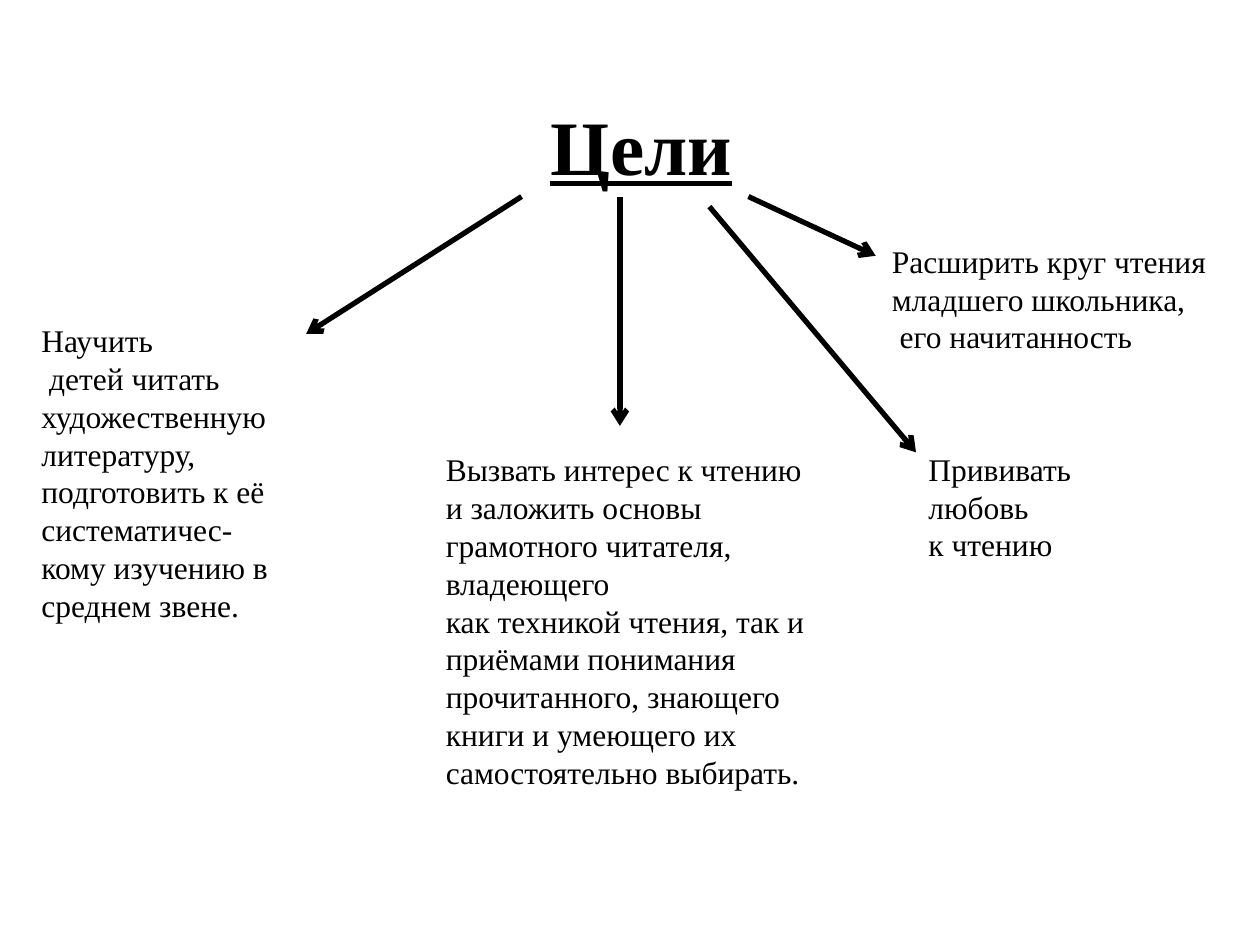
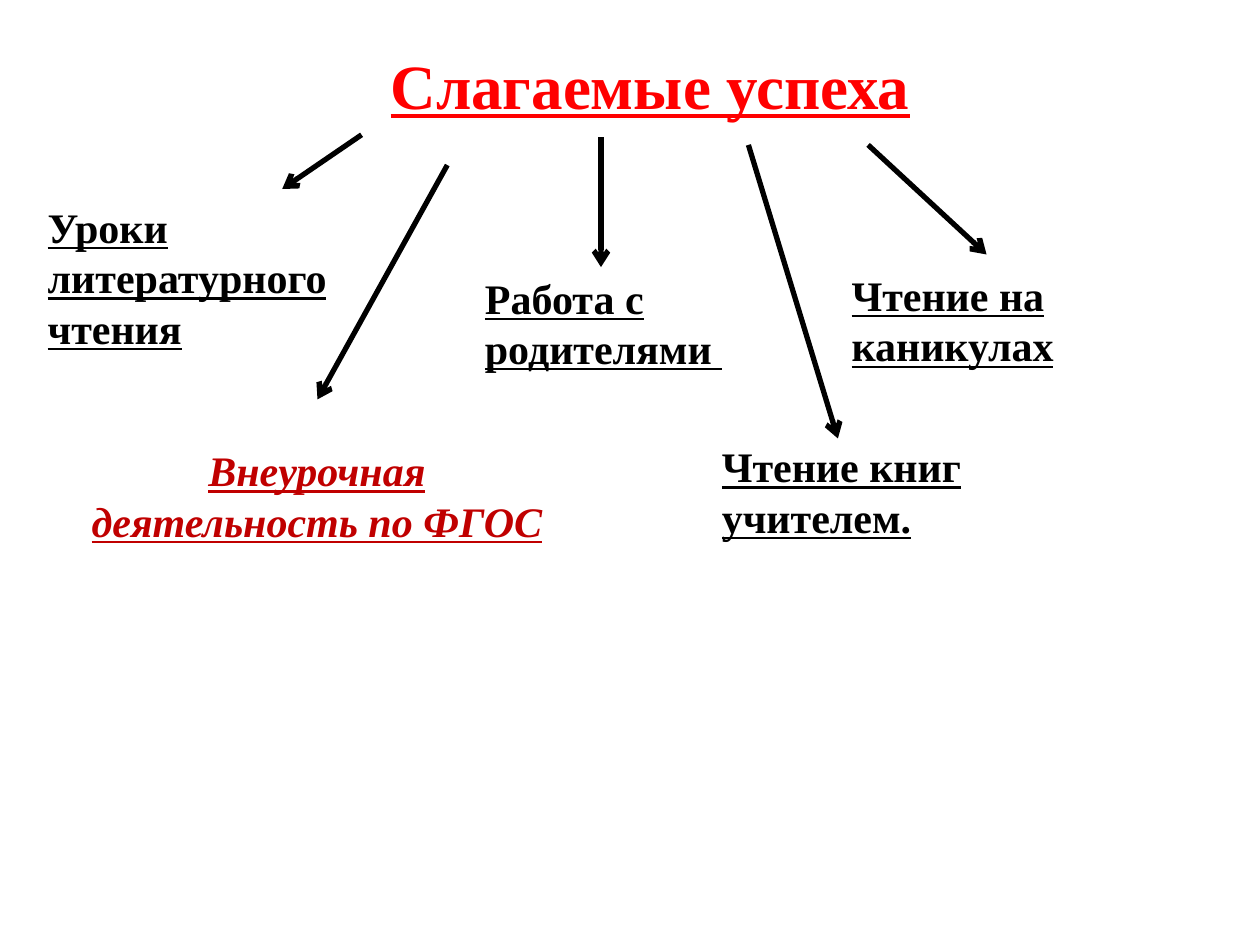
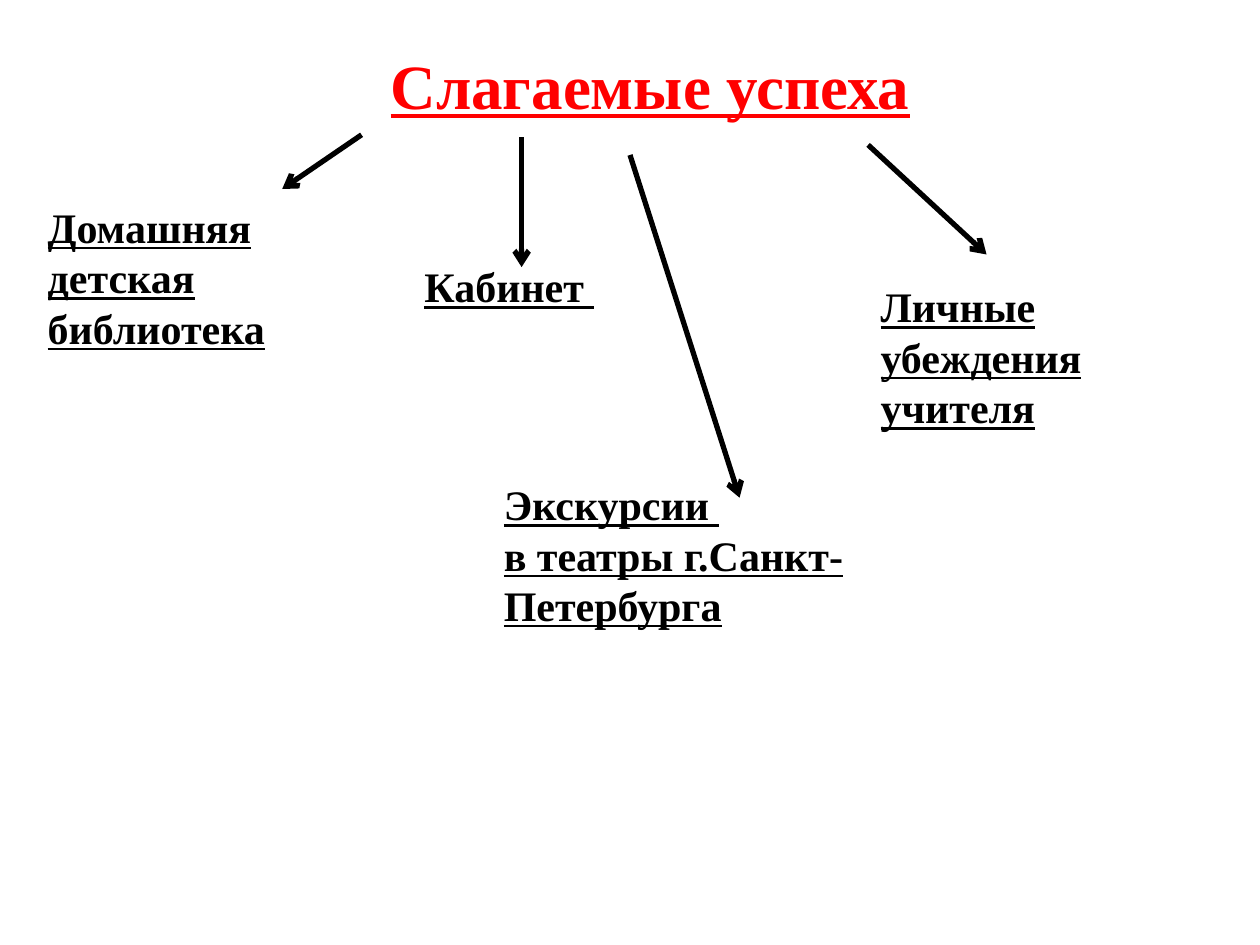
from dataclasses import dataclass

from lxml.etree import SubElement
from pptx import Presentation
from pptx.dml.color import RGBColor
from pptx.enum.shapes import MSO_CONNECTOR
from pptx.enum.text import MSO_ANCHOR, PP_ALIGN
from pptx.oxml.ns import qn
from pptx.util import Inches, Pt


@dataclass(frozen=True)
class Theme:
    font: str = "Times New Roman"
    ink: RGBColor = RGBColor(0x00, 0x00, 0x00)
    heading: RGBColor = RGBColor(0xFF, 0x00, 0x00)
    accent: RGBColor = RGBColor(0xC0, 0x00, 0x00)
    goals_size: int = 44
    heading_size: int = 36
    factor_size: int = 24
    goal_size: int = 18
    arrow_width: int = 3


THEME = Theme()
SLIDE_WIDTH, SLIDE_HEIGHT = Inches(10), Inches(7.5)

# Every place is a (column, row) pair on a grid of square cells
COLUMNS, ROWS = 100, 75

# Arrows shared by both slides on the factors of success
OUTER_ARROWS = [((28.7, 10.7), (22.4, 15)), ((68.9, 11.5), (78.3, 20.2))]


def grid(column, row):
    return round(SLIDE_WIDTH * column / COLUMNS), round(SLIDE_HEIGHT * row / ROWS)


def add_text(slide, place, extent, paragraphs, size, color=THEME.ink, bold=False,
             italic=False, align=PP_ALIGN.LEFT, anchor=MSO_ANCHOR.TOP):
    """Text box in one style; bold text is always underlined."""
    frame = slide.shapes.add_textbox(*grid(*place), *grid(*extent)).text_frame
    frame.word_wrap = True
    frame.vertical_anchor = anchor
    frame.text = "\n".join(paragraphs)
    for paragraph in frame.paragraphs:
        paragraph.alignment = align
        font = paragraph.font
        font.name, font.size, font.color.rgb = THEME.font, Pt(size), color
        font.bold, font.italic, font.underline = bold, italic, bold


def add_title(slide, place, wording, size, color):
    add_text(slide, place, (90, 12.5), [wording], size, color, bold=True,
             align=PP_ALIGN.CENTER, anchor=MSO_ANCHOR.MIDDLE)


def add_goal(slide, place, extent, *paragraphs, anchor=MSO_ANCHOR.TOP):
    add_text(slide, place, extent, paragraphs, THEME.goal_size, anchor=anchor)


def add_factor(slide, place, extent, *paragraphs, **style):
    add_text(slide, place, extent, paragraphs, THEME.factor_size, bold=True, **style)


def add_arrows(slide, arrows):
    for start, end in arrows:
        arrow = slide.shapes.add_connector(
            MSO_CONNECTOR.STRAIGHT, *grid(*start), *grid(*end))
        arrow.line.color.rgb = THEME.ink
        arrow.line.width = Pt(THEME.arrow_width)
        SubElement(arrow.line._get_or_add_ln(), qn("a:tailEnd"), type="arrow")
        SubElement(arrow._element.spPr, qn("a:effectLst"))


def add_blank_slide(deck):
    return deck.slides.add_slide(deck.slide_layouts[6])


def add_success_slide(deck, inner_arrows):
    slide = add_blank_slide(deck)
    add_title(slide, (6.6, 0.4), "Слагаемые успеха", THEME.heading_size, THEME.heading)
    add_arrows(slide, OUTER_ARROWS + inner_arrows)
    return slide


def build_goals(deck):
    slide = add_blank_slide(deck)
    add_title(slide, (5.9, 5.2), "Цели", THEME.goals_size, THEME.ink)
    add_arrows(slide, [
        ((41.4, 15.6), (24.3, 26.5)),
        ((49.2, 15.6), (49.2, 33.8)),
        ((56.3, 16.4), (72.7, 35.9)),
        ((59.4, 15.6), (69.5, 20.3)),
    ])
    add_goal(slide, (2.3, 24.2), (21.3, 26.6),
             "Научить", " детей читать", "художественную", "литературу,",
             "подготовить к её систематичес-", "кому изучению в среднем звене.",
             anchor=MSO_ANCHOR.MIDDLE)
    add_goal(slide, (34.4, 34.4), (33.6, 29.7),
             "Вызвать интерес к чтению", "и заложить основы",
             "грамотного читателя, владеющего", "как техникой чтения, так и",
             "приёмами понимания прочитанного, знающего книги и умеющего их "
             "самостоятельно выбирать.",
             anchor=MSO_ANCHOR.MIDDLE)
    add_goal(slide, (72.7, 35.2), (20.3, 10.1), "Прививать любовь", "к чтению")
    add_goal(slide, (69.8, 18.7), (30.2, 10.1),
             "Расширить круг чтения", "младшего школьника,", " его начитанность")


def build_school_factors(deck):
    slide = add_success_slide(deck, [
        ((47.7, 10.9), (47.7, 21.2)),
        ((59.4, 11.5), (66.5, 34.8)),
        ((35.5, 13.1), (25.2, 31.7)),
    ])
    add_factor(slide, (2.8, 15.5), (29.1, 13.1), "Уроки литературного чтения")
    add_factor(slide, (37.5, 21.1), (28.1, 9.1), "Работа с родителями ")
    add_factor(slide, (66.6, 20.9), (27.5, 9.1), "Чтение на каникулах")
    add_factor(slide, (4.9, 34.8), (40.5, 9.1), "Внеурочная деятельность по ФГОС",
               color=THEME.accent, italic=True, align=PP_ALIGN.CENTER)
    add_factor(slide, (56.3, 34.5), (29.5, 9.1), "Чтение книг учителем.")


def build_wider_factors(deck):
    slide = add_success_slide(deck, [
        ((41.4, 10.9), (41.4, 21.2)),
        ((50, 12.3), (58.7, 39.5)),
    ])
    add_factor(slide, (2.8, 15.5), (29.1, 13.1), "Домашняя детская библиотека")
    add_factor(slide, (32.7, 20.2), (28.1, 5), "Кабинет ")
    add_factor(slide, (68.9, 21.8), (28.3, 13.1), "Личные убеждения учителя")
    add_factor(slide, (39, 37.5), (31.5, 13.1),
               "Экскурсии ", "в театры г.Санкт-Петербурга")


def main():
    deck = Presentation()
    deck.slide_width, deck.slide_height = SLIDE_WIDTH, SLIDE_HEIGHT
    build_goals(deck)
    build_school_factors(deck)
    build_wider_factors(deck)
    deck.save("out.pptx")


if __name__ == "__main__":
    main()
